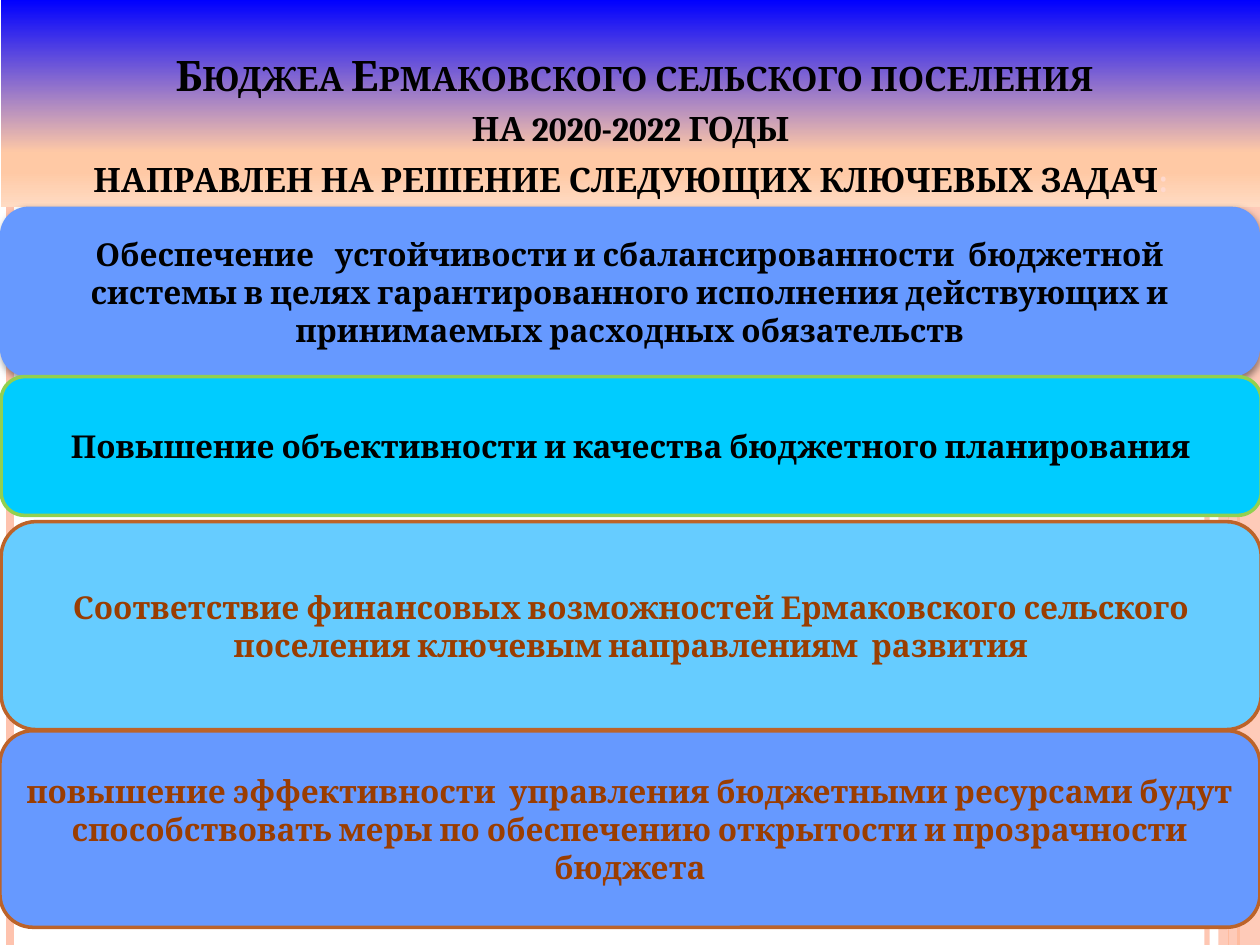
from lxml.etree import SubElement
from pptx import Presentation
from pptx.dml.color import RGBColor
from pptx.enum.shapes import MSO_CONNECTOR, MSO_SHAPE
from pptx.enum.text import MSO_ANCHOR, PP_ALIGN
from pptx.oxml import parse_xml
from pptx.oxml.ns import nsdecls, qn
from pptx.util import Inches, Pt

COLORS = {
    "stripe": "FEC3AE", "accent": "FE8637", "black": "000000", "brown": "9A3D01",
    "blue": "6699FF", "cyan": "00CCFF", "sky": "66CCFF", "green": "92D050",
    "rust": "BC6329", "pale": "FFD9CE",
}
TITLE_STOPS = [(0, "0000FF"), (74, "FFC9A5"), (83, "FFC9A5"), (100, "FFDBC3")]
STRIPES = [
    (9.58, "stripe", 3, 93), (0.08, "stripe", 4.5, 100),
    (9.83, "accent", 1.5, 100), (9.75, "accent", 0.75, 100),
]
TITLE = [
    " Бюджеа Ермаковского сельского поселения",
    "на 2020-2022 годы",
    "направлен на решение следующих ключевых задач",
]
TASKS = [
    ((0, 1.64, 10, 1.35), "blue", None, "black",
     "Обеспечение   устойчивости и сбалансированности  бюджетной системы в целях "
     "гарантированного исполнения действующих и принимаемых расходных обязательств"),
    ((0.01, 2.99, 10, 1.1), "cyan", "green", "black",
     "Повышение объективности и качества бюджетного планирования"),
    ((0.01, 4.14, 10, 1.65), "sky", "rust", "brown",
     "Соответствие финансовых возможностей Ермаковского сельского поселения "
     "ключевым направлениям  развития"),
    ((0, 5.8, 10, 1.56), "blue", "rust", "brown",
     "повышение эффективности  управления бюджетными ресурсами будут способствовать "
     "меры по обеспечению открытости и прозрачности бюджета"),
]


def rgb(name):
    """Return the named colour."""
    return RGBColor.from_string(COLORS[name])


def set_alpha(el, percent):
    """Make the first solid colour under an element partly transparent."""
    clr = next(el.iter(qn("a:srgbClr")))
    SubElement(clr, qn("a:alpha")).set("val", str(percent * 1000))


def add_box(s, kind, box, fill=None, line=None):
    """Add a shape without a shadow, with the given fill and outline."""
    sp = s.shapes.add_shape(kind, *map(Inches, box))
    sp.shadow.inherit = False
    if fill:
        sp.fill.solid()
        sp.fill.fore_color.rgb = rgb(fill)
    if line:
        sp.line.color.rgb = rgb(line)
        sp.line.width = Pt(2)
    else:
        sp.line.fill.background()
    return sp


def add_run(p, text, size, color):
    """Add a bold run to a paragraph and return it."""
    r = p.add_run()
    r.text = text
    for key, value in {"name": "Cambria", "size": Pt(size), "bold": True}.items():
        setattr(r.font, key, value)
    r.font.color.rgb = rgb(color)
    return r


def start_text(sp, anchor):
    """Prepare a shape's text frame and return its centred paragraph."""
    tf = sp.text_frame
    tf.word_wrap = True
    tf.vertical_anchor = anchor
    p = tf.paragraphs[0]
    p.alignment = PP_ALIGN.CENTER
    return p


def add_stripes(s, band, height):
    """Draw the vertical edge lines and the right-hand band."""
    for x, color, width, alpha in STRIPES:
        cx = s.shapes.add_connector(
            MSO_CONNECTOR.STRAIGHT, Inches(x), 0, Inches(x), Inches(height))
        cx.line.color.rgb = rgb(color)
        cx.line.width = Pt(width)
        spPr = cx._element.spPr
        if alpha < 100:
            set_alpha(spPr, alpha)
        SubElement(spPr, qn("a:effectLst"))
    sp = add_box(s, MSO_SHAPE.RECTANGLE, band, "stripe")
    set_alpha(sp._element.spPr, 87)


def add_title(s, box):
    """Draw the gradient header with its small-caps title."""
    sp = add_box(s, MSO_SHAPE.RECTANGLE, box)
    stops = "".join(
        f'<a:gs pos="{pos * 1000}"><a:srgbClr val="{color}"/></a:gs>'
        for pos, color in TITLE_STOPS)
    sp._element.spPr.find(qn("a:prstGeom")).addnext(parse_xml(
        f'<a:gradFill {nsdecls("a")} rotWithShape="1"><a:gsLst>{stops}</a:gsLst>'
        '<a:lin ang="5400000" scaled="0"/></a:gradFill>'))
    p = start_text(sp, MSO_ANCHOR.BOTTOM)
    for i, text in enumerate(TITLE):
        if i:
            p.add_line_break()
        add_run(p, text, 24, "black")
    add_run(p, ":", 24, "pale")
    for r in p.runs:
        r.font._element.set("cap", "small")


def add_task(s, box, fill, line, color, text):
    """Draw one rounded task panel, shadowed when it has no outline."""
    sp = add_box(s, MSO_SHAPE.ROUNDED_RECTANGLE, box, fill, line)
    if not line:
        effects = sp._element.spPr.find(qn("a:effectLst"))
        effects.append(parse_xml(
            f'<a:outerShdw {nsdecls("a")} blurRad="{Pt(4)}" dist="{Pt(1.6)}" '
            'dir="5400000" rotWithShape="0"><a:srgbClr val="000000">'
            '<a:alpha val="42000"/></a:srgbClr></a:outerShdw>'))
    add_run(start_text(sp, MSO_ANCHOR.MIDDLE), text, 18, color)


def main():
    """Build the slide and save it."""
    prs = Presentation()
    prs.slide_width, prs.slide_height = Inches(10), Inches(7.5)
    s = prs.slides.add_slide(prs.slide_layouts[6])
    add_stripes(s, (9.67, 0, 0.33, 7.5), 7.5)
    add_title(s, (0.01, 0, 9.99, 1.64))
    for task in TASKS:
        add_task(s, *task)
    prs.save("out.pptx")


if __name__ == "__main__":
    main()
